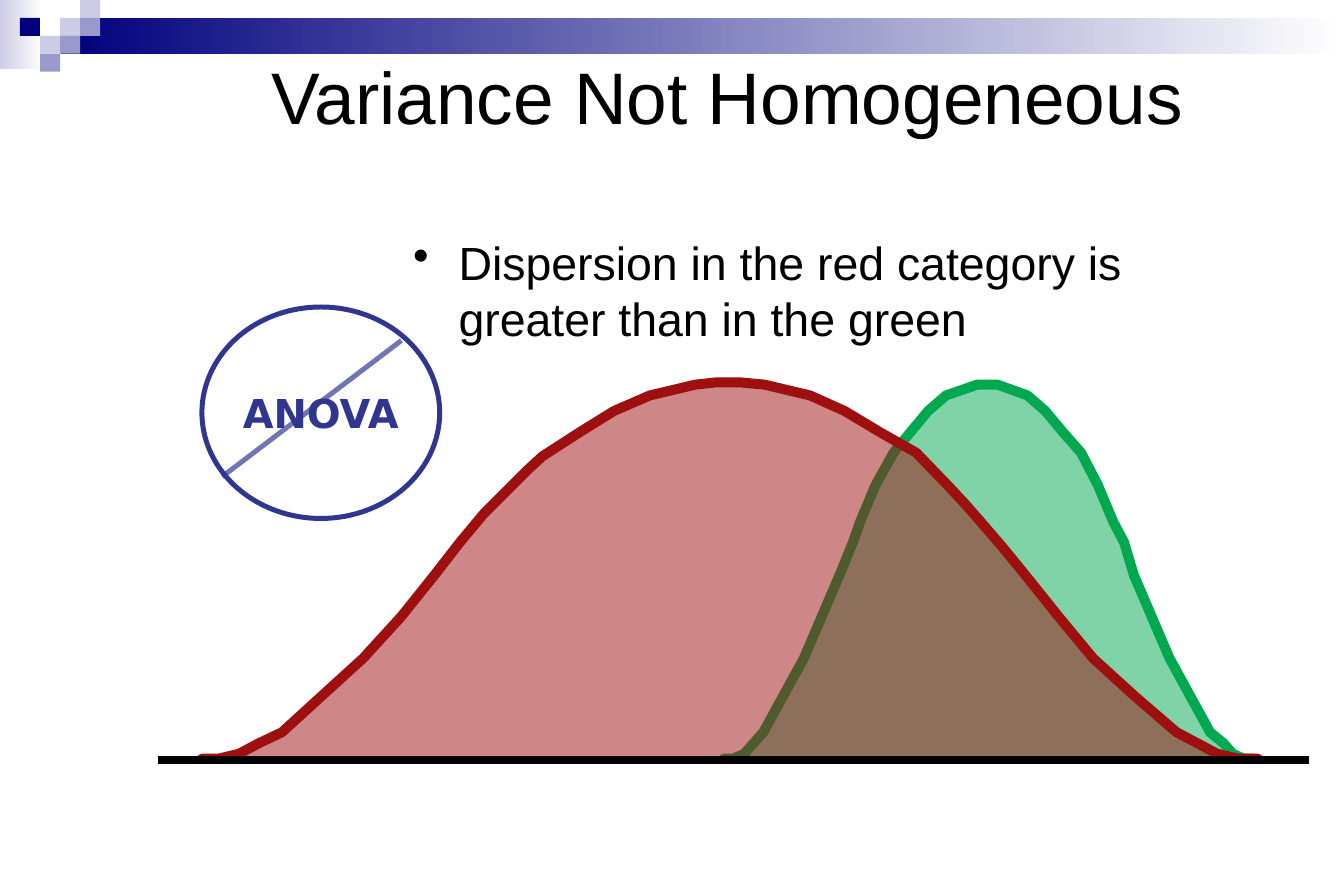
"""Build the slide on unequal variances with two overlapping distributions."""
from dataclasses import dataclass

from lxml.etree import SubElement
from pptx import Presentation
from pptx.dml.color import RGBColor
from pptx.enum.shapes import MSO_CONNECTOR as Connector, MSO_SHAPE as Shape
from pptx.enum.text import MSO_ANCHOR as Anchor, PP_ALIGN as Align
from pptx.oxml.ns import qn
from pptx.util import Inches, Pt


@dataclass(frozen=True)
class Theme:
    navy: str = "00007D"
    lilac: str = "9999CC"
    pale: str = "CCCCE6"
    white: str = "FFFFFF"
    black: str = "000000"
    green: str = "00A84F"
    red: str = "9E0F0F"
    blue: str = "303590"
    font: str = "Arial"
    badge_font: str = "DejaVu Sans"
    title: int = 44
    body: int = 28
    badge: int = 24
    outline: float = 6
    axis: float = 4.5
    stroke: float = 3


THEME = Theme()
TITLE = "Variance Not Homogeneous"
POINT = "Dispersion in the red category is greater than in the green"
BADGE = "ANOVA"

WIDTH, HEIGHT = Inches(11.25), Inches(7.5)
GRID = (WIDTH / 45, HEIGHT / 30)
TILE = (WIDTH / 67, HEIGHT / 50)
HUNDREDTH = Inches(0.01)

TITLE_AREA = (6, 0.68, 36.72, 5)
POINT_AREA = (13.44, 7.64, 27.56, 4.16)
BADGE_AREA = (6.76, 10.28, 7.96, 7.08)
BADGE_SLASH = (13.44, 11.4, 7.44, 15.96)
AXIS = (5.28, 25.44, 43.84, 25.44)

GRADIENTS = [
    ((0, 0, 2.1, 3.87), THEME.pale),
    ((3.04, 1, 63.96, 2), THEME.navy),
]
TILES = [
    (3, 1, THEME.pale), (4, 0, THEME.pale), (4, 1, THEME.lilac), (2, 2, THEME.pale),
    (1, 1, THEME.navy), (3, 2, THEME.lilac), (2, 3, THEME.lilac),
]
CURVES = [
    (THEME.green, [
        (606, 635), (614, 635), (623, 631), (631, 622), (639, 613), (656, 582), (673, 551),
        (688, 516), (703, 481), (714, 454), (720, 437), (733, 406), (748, 379), (762, 362),
        (777, 344), (792, 331), (818, 322), (835, 322), (860, 331), (875, 344), (890, 362),
        (905, 379), (919, 406), (932, 437), (941, 454), (949, 481), (964, 516), (979, 551),
        (996, 582), (1013, 613), (1024, 622), (1032, 631), (1041, 635), (1049, 635),
    ]),
    (THEME.red, [
        (169, 635), (183, 635), (200, 631), (217, 622), (236, 613), (270, 582), (304, 551),
        (336, 516), (364, 481), (385, 454), (405, 430), (427, 408), (441, 394), (454, 382),
        (485, 362), (514, 344), (544, 331), (582, 322), (600, 320), (619, 320), (640, 322),
        (678, 331), (707, 344), (737, 362), (767, 379), (794, 407), (808, 422), (822, 438),
        (840, 459), (858, 481), (886, 516), (915, 551), (949, 582), (985, 613), (1002, 622),
        (1019, 631), (1036, 635), (1053, 635),
    ]),
]


def scaled(area, unit=GRID):
    return [round(value * unit[index % 2]) for index, value in enumerate(area)]


def set_alpha(properties, percent):
    color = properties.find(qn("a:solidFill")).find(qn("a:srgbClr"))
    SubElement(color, qn("a:alpha")).set("val", str(percent * 1000))


def set_line(line, color, width):
    line.color.rgb = RGBColor.from_string(color)
    line.width = Pt(width)


def add_block(page, area, color, fade=None):
    block = page.shapes.add_shape(Shape.RECTANGLE, *area)
    block.shadow.inherit = False
    block.line.fill.background()
    if fade:
        block.fill.gradient()
        block.fill.gradient_angle = 0
        for stop, shade in zip(block.fill.gradient_stops, (color, fade)):
            stop.color.rgb = RGBColor.from_string(shade)
    else:
        block.fill.solid()
        block.fill.fore_color.rgb = RGBColor.from_string(color)


def add_curve(page, color, points):
    builder = page.shapes.build_freeform(*points[0], scale=HUNDREDTH)
    builder.add_line_segments(points[1:], close=False)
    curve = builder.convert_to_shape()
    curve.shadow.inherit = False
    curve.fill.solid()
    curve.fill.fore_color.rgb = RGBColor.from_string(color)
    set_alpha(curve.element.spPr, 50)
    set_line(curve.line, color, THEME.outline)
    stroke = curve.element.spPr.find(qn("a:ln"))
    stroke.set("cap", "rnd")
    SubElement(stroke, qn("a:round"))


def add_line(page, ends, color, width, alpha=None):
    line = page.shapes.add_connector(Connector.STRAIGHT, *scaled(ends))
    set_line(line.line, color, width)
    properties = line.element.spPr
    if alpha:
        set_alpha(properties.find(qn("a:ln")), alpha)
    SubElement(properties, qn("a:effectLst"))


def write(box, text, *, size, color=THEME.black, font=THEME.font, bold=False,
          align=Align.CENTER, anchor=Anchor.MIDDLE, wrap=True, before=0, bullet=None):
    frame = box.text_frame
    frame.word_wrap = wrap
    frame.vertical_anchor = anchor
    para = frame.paragraphs[0]
    para.alignment = align
    para.space_before = Pt(before)
    if bullet:
        properties = para._p.get_or_add_pPr()
        indent = Inches(0.38)
        properties.set("marL", str(indent))
        properties.set("indent", str(-indent))
        SubElement(properties, qn("a:buChar")).set("char", bullet)
    span = para.add_run()
    span.text = text
    span.font.name = font
    span.font.size = Pt(size)
    span.font.bold = bold
    span.font.color.rgb = RGBColor.from_string(color)


def main():
    deck = Presentation()
    deck.slide_width, deck.slide_height = WIDTH, HEIGHT
    page = deck.slides.add_slide(deck.slide_layouts[6])

    for area, color in GRADIENTS:
        add_block(page, scaled(area, TILE), color, fade=THEME.white)
    for column, row, color in TILES:
        add_block(page, scaled((column, row, 1, 1), TILE), color)
    for color, points in CURVES:
        add_curve(page, color, points)
    add_line(page, AXIS, THEME.black, THEME.axis)

    write(page.shapes.add_textbox(*scaled(TITLE_AREA)), TITLE, size=THEME.title)
    write(page.shapes.add_textbox(*scaled(POINT_AREA)), POINT, size=THEME.body,
          align=Align.LEFT, anchor=Anchor.TOP, before=4, bullet="•")

    badge = page.shapes.add_shape(Shape.OVAL, *scaled(BADGE_AREA))
    badge.shadow.inherit = False
    badge.fill.background()
    set_line(badge.line, THEME.blue, THEME.stroke)
    write(badge, BADGE, size=THEME.badge, color=THEME.blue, font=THEME.badge_font,
          bold=True, wrap=False, before=4)
    add_line(page, BADGE_SLASH, THEME.blue, THEME.stroke, alpha=67)

    deck.save("out.pptx")


if __name__ == "__main__":
    main()
